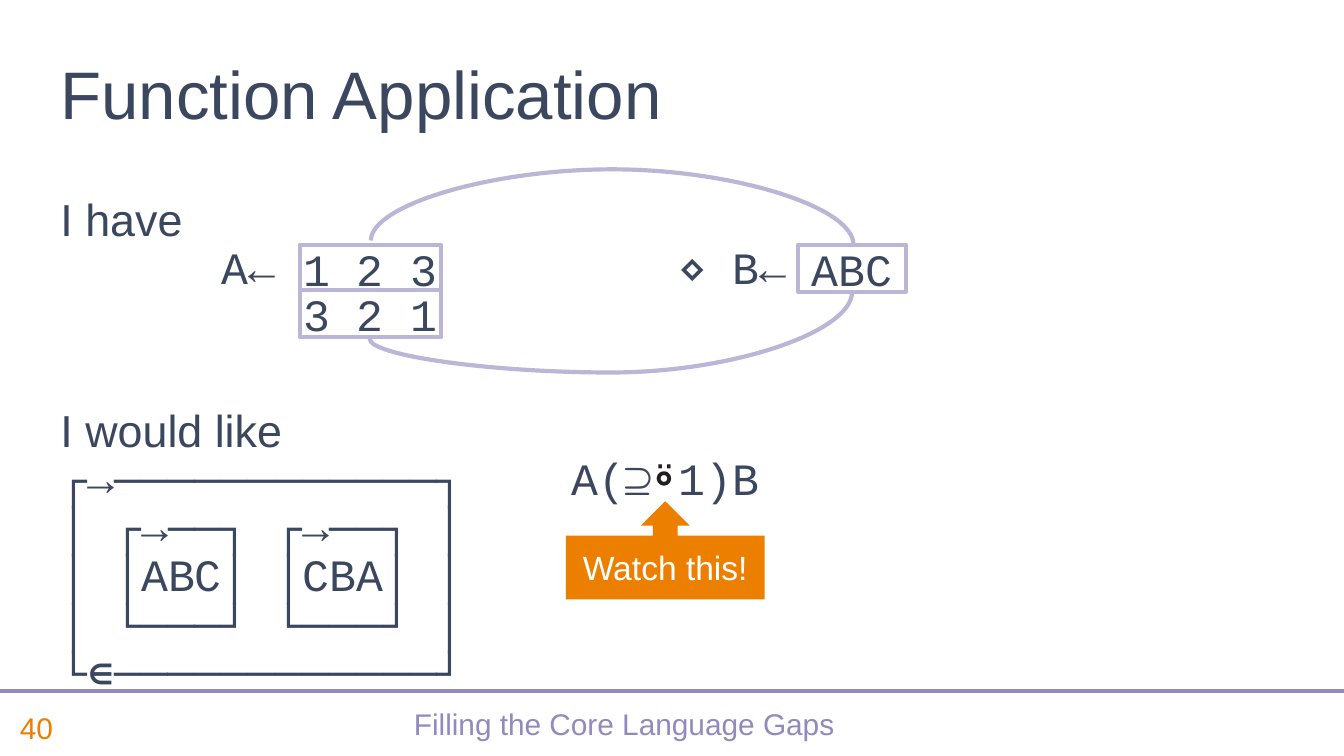
"""Build the "Function Application" slide."""
import pptx
import pptx.dml.color
import pptx.enum.shapes
import pptx.enum.text
import pptx.oxml.ns
import pptx.util
from lxml import etree

Inches, Pt = pptx.util.Inches, pptx.util.Pt
RGBColor = pptx.dml.color.RGBColor
ALIGN, ANCHOR = pptx.enum.text.PP_ALIGN, pptx.enum.text.MSO_ANCHOR
SHAPE = pptx.enum.shapes.MSO_SHAPE
CONNECTOR = pptx.enum.shapes.MSO_CONNECTOR
qn = pptx.oxml.ns.qn

NAVY = RGBColor(0x3B, 0x47, 0x5E)
PURPLE = RGBColor(0x92, 0x8A, 0xBD)
LILAC = RGBColor(0xBB, 0xB5, 0xD6)
ORANGE = RGBColor(0xED, 0x7F, 0x00)
INK = RGBColor(0x23, 0x1F, 0x20)
WHITE = RGBColor(0xFF, 0xFF, 0xFF)
SANS, MONO = "Arial", "Courier New"

TITLE = "Function Application"
BODY = [
    ([("I have", NAVY)], SANS, 0),
    ([("      A←               ⋄ B←", NAVY)], MONO, 0),
    ([("I would like", NAVY)], SANS, 58),
    ([("┌→────────────┐    A(⊇", NAVY), ("¨", INK), ("1)B", NAVY)], MONO, 0),
    ([("│ ┌→──┐ ┌→──┐ │", NAVY)], MONO, 0),
    ([("│ │ABC│ │CBA│ │", NAVY)], MONO, 0),
    ([("│ └───┘ └───┘ │", NAVY)], MONO, 0),
    ([("└∊────────────┘", NAVY)], MONO, 0),
]
CELLS = [
    ("1 2 3", (2.23, 1.82, 1.05, 0.35), None),
    ("3 2 1", (2.23, 2.16, 1.05, 0.35), WHITE),
    ("ABC", (5.94, 1.82, 0.8, 0.35), None),
]
CURVES = [
    ((4.37, 0.55, 0.35, 3.59), 90, False, 171900),
    ((4.54, 0.01, 0.03, 3.59), 270, True, 1870000),
]
FOOTERS = [
    ("Filling the Core Language Gaps", (0.78, 5.19, 7.73, 0.44), PURPLE, ALIGN.CENTER, 0.8),
    ("40", (0.05, 5.19, 0.73, 0.44), ORANGE, ALIGN.LEFT, 1.0),
]


def add_text(p, text, size=24, font=SANS, color=NAVY, align=ALIGN.LEFT):
    p.alignment = align
    r = p.add_run()
    r.text = text
    r.font.size, r.font.name = Pt(size), font
    r.font.color.rgb = color


def place(sp, box):
    sp.left, sp.top, sp.width, sp.height = map(Inches, box)


def add_shape(slide, kind, box, fill=None, line=None, width=2.25):
    sp = slide.shapes.add_shape(kind, *map(Inches, box))
    sp.shadow.inherit = False
    for part, color in ((sp.fill, fill), (sp.line.fill, line)):
        if color is None:
            part.background()
        else:
            part.solid()
            part.fore_color.rgb = color
    if line is not None:
        sp.line.width = Pt(width)
    sp.text_frame.vertical_anchor = ANCHOR.MIDDLE
    return sp


def add_line(slide, kind, ends, color):
    sp = slide.shapes.add_connector(kind, *map(Inches, ends))
    sp.line.color.rgb, sp.line.width = color, Pt(2.25)
    etree.SubElement(sp._element.spPr, qn("a:effectLst"))
    return sp


def add_curve(slide, box, angle, flip, bend):
    x, y, w, h = box
    top, bottom = (y + h, y) if flip else (y, y + h)
    sp = add_line(slide, CONNECTOR.CURVE, (x, top, x + w, bottom), LILAC)
    sp._element.spPr.find(qn("a:xfrm")).set("rot", str(angle * 60000))
    geom = sp._element.spPr.find(qn("a:prstGeom"))
    guides = geom.find(qn("a:avLst"))
    if guides is None:
        guides = etree.SubElement(geom, qn("a:avLst"))
    etree.SubElement(guides, qn("a:gd"), name="adj1", fmla=f"val {bend}")


def fill_body(sp):
    tf = sp.text_frame
    tf.word_wrap = True
    tf.auto_size = pptx.enum.text.MSO_AUTO_SIZE.NONE
    tf.vertical_anchor = ANCHOR.TOP
    for i, (runs, font, before) in enumerate(BODY):
        p = tf.paragraphs[0] if i == 0 else tf.add_paragraph()
        props = p._p.get_or_add_pPr()
        props.set("marL", "0")
        props.set("indent", "0")
        etree.SubElement(props, qn("a:buNone"))
        p.space_before = Pt(before)
        p.line_spacing = 0.9 if font == MONO else 1.0
        for text, color in runs:
            add_text(p, text, font=font, color=color)


def main():
    prs = pptx.Presentation()
    prs.slide_width, prs.slide_height = Inches(10), Inches(10) * 9 // 16
    slide = prs.slides.add_slide(prs.slide_layouts[1])
    title, body = slide.placeholders

    place(title, (0.35, 0.29, 7.66, 0.75))
    title.text_frame.vertical_anchor = ANCHOR.BOTTOM
    add_text(title.text_frame.paragraphs[0], TITLE, size=36)
    place(body, (0.35, 1.38, 9.33, 3.95))
    fill_body(body)

    add_line(slide, CONNECTOR.STRAIGHT, (0, 5.14, 10, 5.14), PURPLE)
    for text, box, color, align, spacing in FOOTERS:
        sp = slide.shapes.add_textbox(*map(Inches, box))
        tf = sp.text_frame
        tf.word_wrap = True
        tf.vertical_anchor = ANCHOR.MIDDLE
        p = tf.paragraphs[0]
        p.line_spacing = spacing
        add_text(p, text, size=16, color=color, align=align)

    for text, box, fill in CELLS:
        tf = add_shape(slide, SHAPE.RECTANGLE, box, fill, LILAC).text_frame
        tf.margin_left = tf.margin_right = tf.margin_top = tf.margin_bottom = 0
        add_text(tf.paragraphs[0], text, font=MONO, align=ALIGN.CENTER)
    for curve in CURVES:
        add_curve(slide, *curve)

    add_shape(slide, SHAPE.OVAL, (4.9, 3.52, 0.08, 0.08), line=INK, width=2)
    callout = add_shape(slide, SHAPE.UP_ARROW_CALLOUT, (4.21, 3.73, 1.48, 0.73), ORANGE)
    add_text(callout.text_frame.paragraphs[0], "Watch this!", size=18,
             color=WHITE, align=ALIGN.CENTER)
    prs.save("out.pptx")


if __name__ == "__main__":
    main()
